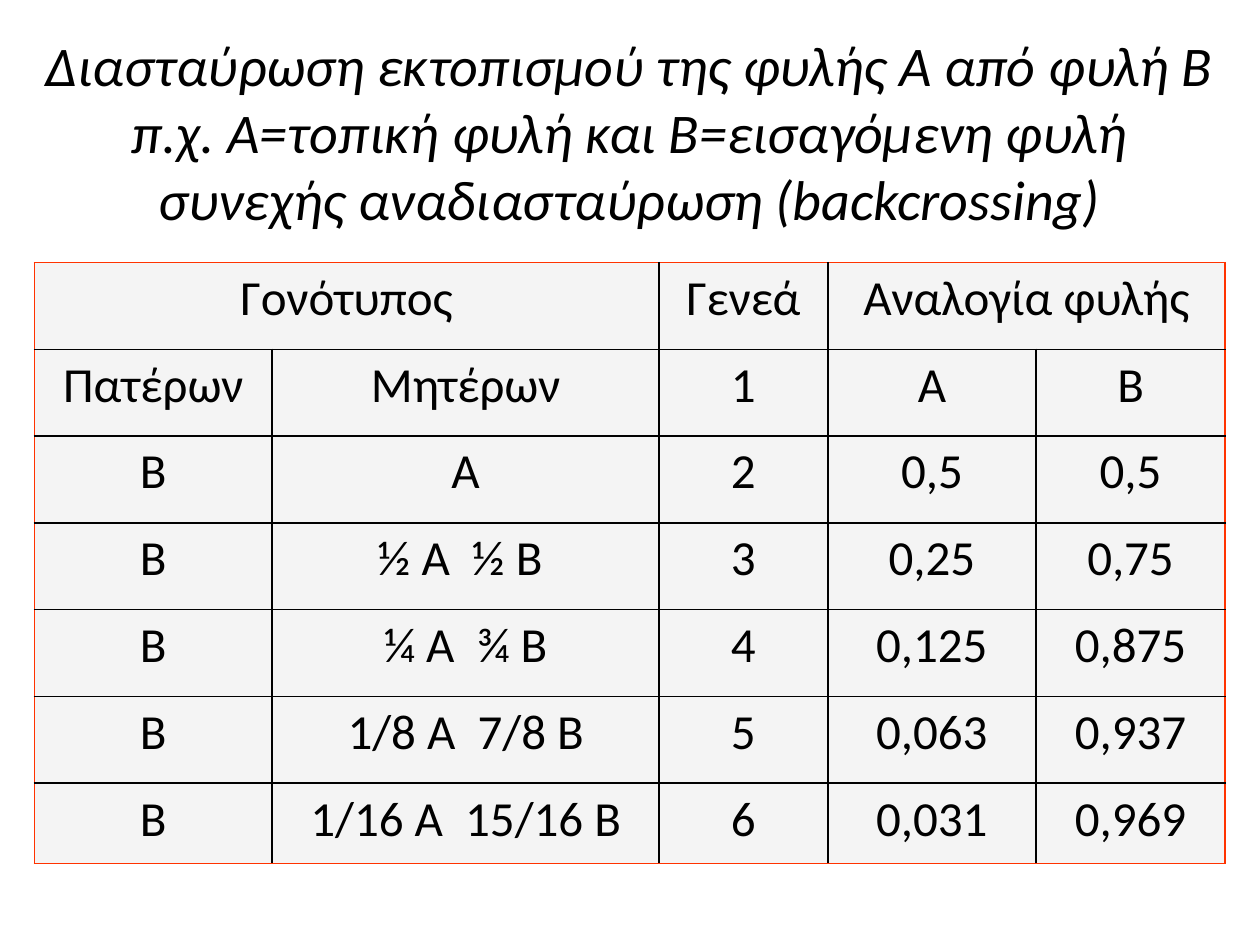
from lxml.etree import SubElement
from pptx import Presentation
from pptx.dml.color import RGBColor as RGB
from pptx.enum.text import MSO_ANCHOR as Anchor, PP_ALIGN as Align
from pptx.oxml.ns import qn
from pptx.util import Pt

COLORS = {"ink": "000000", "edge": "FF3300", "cell": "EAEAEA"}
TITLE = ("Διασταύρωση εκτοπισμού της φυλής Α από φυλή Β\v"
         "π.χ. Α=τοπική φυλή και Β=εισαγόμενη φυλή\v"
         "συνεχής αναδιασταύρωση (backcrossing)")
ROWS = [
    ["Γονότυπος", "", "Γενεά", "Αναλογία φυλής", ""],
    ["Πατέρων", "Μητέρων", "1", "Α", "Β"],
    ["Β", "Α", "2", "0,5", "0,5"],
    ["Β", "½ Α  ½ Β ", "3", "0,25", "0,75"],
    ["Β", "¼ Α  ¾ Β", "4", "0,125", "0,875"],
    ["Β", "1/8 Α  7/8 Β", "5", "0,063", "0,937"],
    ["Β", "1/16 Α  15/16 Β", "6", "0,031", "0,969"],
]
WIDTHS = [136, 221, 96.5, 119, 108]
HEIGHTS = [49.6] * 6 + [46]


def style(par, size, italic=False):
    par.alignment = Align.CENTER
    for run in par.runs:
        font = run.font
        font.name, font.size, font.italic = "Calibri", Pt(size), italic
        font.color.rgb = RGB.from_string(COLORS["ink"])


def add_title(slide, x, y, w, h):
    frame = slide.shapes.add_textbox(Pt(x), Pt(y), Pt(w), Pt(h)).text_frame
    frame.word_wrap = True
    frame.vertical_anchor = Anchor.MIDDLE
    par = frame.paragraphs[0]
    par.text = TITLE
    style(par, 32, italic=True)


def add_border(cell, side, color):
    line = SubElement(cell._tc.get_or_add_tcPr(), qn(f"a:ln{side}"), w=str(Pt(1)))
    fill = SubElement(line, qn("a:solidFill"))
    SubElement(fill, qn("a:srgbClr"), val=COLORS[color])


def fill_half(cell):
    """Fill the cell at 50% opacity."""
    cell.fill.solid()
    cell.fill.fore_color.rgb = RGB.from_string(COLORS["cell"])
    tint = cell._tc.tcPr.find(f".//{qn('a:solidFill')}[last()]/{qn('a:srgbClr')}")
    for node in cell._tc.tcPr.findall(qn("a:solidFill")):
        tint = node.find(qn("a:srgbClr"))
    SubElement(tint, qn("a:alpha"), val="50000")


def space_before(par, percent):
    gap = SubElement(par._p.get_or_add_pPr(), qn("a:spcBef"))
    SubElement(gap, qn("a:spcPct"), val=str(percent * 1000))


def add_grid(slide, x, y):
    table = slide.shapes.add_table(
        len(ROWS), len(WIDTHS), Pt(x), Pt(y),
        Pt(sum(WIDTHS)), Pt(sum(HEIGHTS))).table
    table.first_row = table.horz_banding = False
    for col, width in zip(table.columns, WIDTHS):
        col.width = Pt(width)
    for row, height in zip(table.rows, HEIGHTS):
        row.height = Pt(height)
    for c in (0, 3):
        table.cell(0, c).merge(table.cell(0, c + 1))

    for r, texts in enumerate(ROWS):
        for c, text in enumerate(texts):
            cell = table.cell(r, c)
            span = cell.span_width if cell.is_merge_origin else 1
            outer = {"L": c == 0, "R": c + span == len(WIDTHS),
                     "T": r == 0, "B": r == len(ROWS) - 1}
            for side, edge in outer.items():
                add_border(cell, side, "edge" if edge else "ink")
            fill_half(cell)
            if text:
                cell.text_frame.text = text
                par = cell.text_frame.paragraphs[0]
                style(par, 28)
                space_before(par, 20)


def main():
    deck = Presentation()
    deck.slide_width, deck.slide_height = Pt(720), Pt(540)
    slide = deck.slides.add_slide(deck.slide_layouts[6])
    add_title(slide, 8.6, 21.6, 702.8, 106.6)
    add_grid(slide, 19.6, 150)
    deck.save("out.pptx")


if __name__ == "__main__":
    main()
